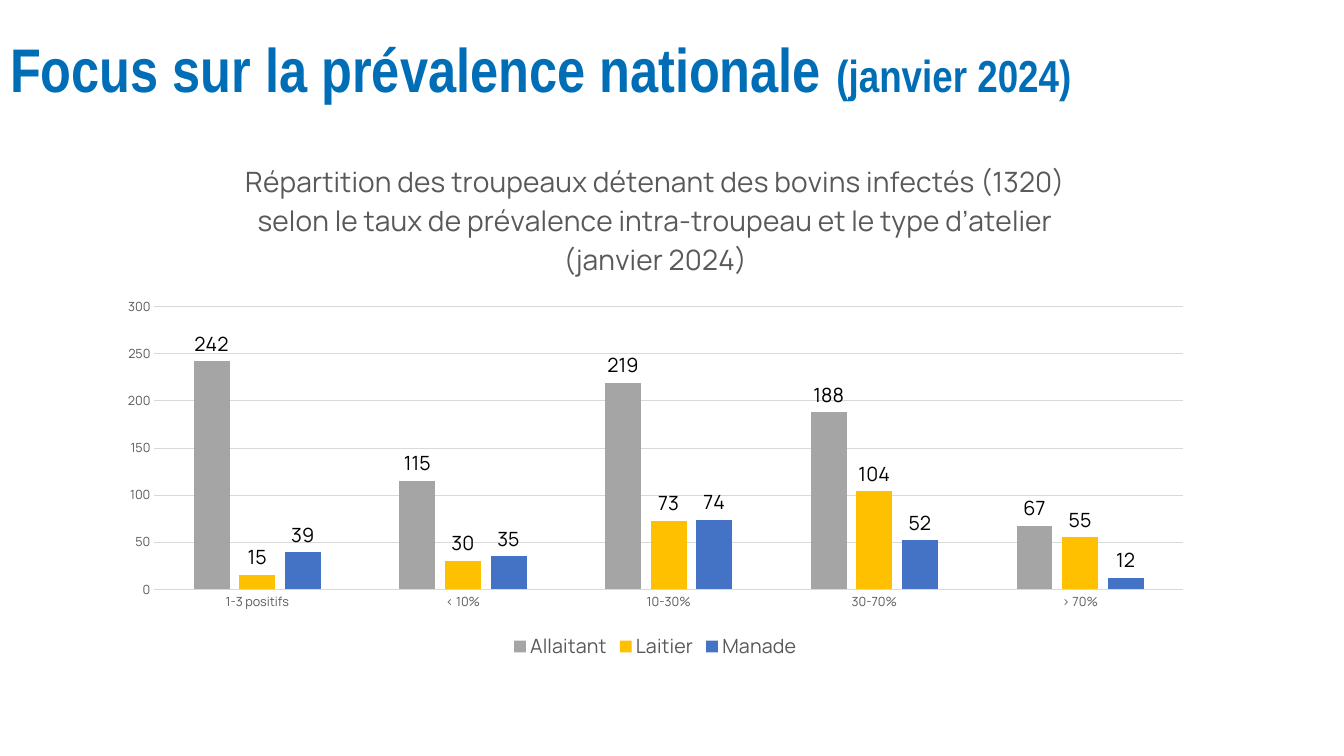
from dataclasses import dataclass

from pptx import Presentation, util as u
from pptx.chart.data import CategoryChartData
from pptx.dml.color import RGBColor
from pptx.enum import chart as ch, text as tx


@dataclass(frozen=True)
class Theme:
    head: str = "Arial Narrow"
    body: str = "Manrope"
    blue: str = "006EB6"
    gray: str = "595959"
    rule: str = "D9D9D9"
    black: str = "000000"
    bars: tuple = ("A5A5A5", "FFC000", "4472C4")
    large: int = 44
    mid: int = 32
    lead: int = 20
    label: int = 14
    tick: int = 9


def put(item, values):
    for name, value in values.items():
        setattr(item, name, value)


class Deck:
    def __init__(self, theme):
        self.theme = theme
        self.file = Presentation()
        put(self.file, dict(slide_width=u.Inches(13.33), slide_height=u.Inches(7.5)))
        self.slide = self.file.slides.add_slide(self.file.slide_layouts[5])

    def area(self, left, top, width, height):
        wide, high = self.file.slide_width, self.file.slide_height
        return [int(part * side / 100) for part, side in
                zip((left, top, width, height), (wide, high, wide, high))]

    def font(self, font, size, color, name=None, bold=False):
        put(font, dict(size=u.Pt(size), bold=bold, name=name or self.theme.body))
        font.color.rgb = RGBColor.from_string(color)

    def line(self, line, color):
        line.width = u.Pt(0.75)
        line.color.rgb = RGBColor.from_string(color)

    def title(self, area, parts):
        shape = self.slide.shapes.title
        put(shape, dict(zip(("left", "top", "width", "height"), self.area(*area))))
        put(shape.text_frame, dict(word_wrap=True, auto_size=tx.MSO_AUTO_SIZE.NONE,
                                   vertical_anchor=tx.MSO_ANCHOR.MIDDLE))
        para = shape.text_frame.paragraphs[0]
        put(para, dict(alignment=tx.PP_ALIGN.LEFT, line_spacing=0.9))
        for words, size in parts:
            run = para.add_run()
            run.text = words
            self.font(run.font, size, self.theme.blue, self.theme.head, True)

    def chart(self, area, title, groups, series):
        theme = self.theme
        data = CategoryChartData()
        data.categories = groups
        for name, values in series.items():
            data.add_series(name, values)
        chart = self.slide.shapes.add_chart(
            ch.XL_CHART_TYPE.COLUMN_CLUSTERED, *self.area(*area), data).chart
        self.font(chart.font, 10, theme.black)

        chart.has_title = True
        run = chart.chart_title.text_frame.paragraphs[0].add_run()
        run.text = title
        self.font(run.font, theme.lead, theme.gray)
        chart.chart_title.include_in_layout = False

        chart.has_legend = True
        put(chart.legend, dict(position=ch.XL_LEGEND_POSITION.BOTTOM,
                               include_in_layout=False))
        self.font(chart.legend.font, theme.label, theme.gray)

        for axis in (chart.category_axis, chart.value_axis):
            put(axis, dict(major_tick_mark=ch.XL_TICK_MARK.NONE,
                           minor_tick_mark=ch.XL_TICK_MARK.NONE))
            self.font(axis.tick_labels.font, theme.tick, theme.gray)
        self.line(chart.category_axis.format.line, theme.rule)
        put(chart.value_axis, dict(minimum_scale=0, maximum_scale=300, major_unit=50))
        chart.value_axis.format.line.fill.background()
        self.line(chart.value_axis.major_gridlines.format.line, theme.rule)

        plot = chart.plots[0]
        put(plot, dict(gap_width=219, overlap=-27, vary_by_categories=False))
        for bars, color in zip(plot.series, theme.bars):
            bars.format.fill.solid()
            bars.format.fill.fore_color.rgb = RGBColor.from_string(color)
            put(bars.data_labels, dict(show_value=True,
                                       position=ch.XL_LABEL_POSITION.OUTSIDE_END))
            self.font(bars.data_labels.font, theme.label, theme.black)


def main():
    theme = Theme()
    deck = Deck(theme)
    deck.title((0, 5.2, 100, 8.8), [
        ("Focus sur la prévalence nationale ", theme.large),
        ("(janvier 2024)", theme.mid),
    ])
    deck.chart(
        (7.88, 18.27, 81.77, 69.6),
        "Répartition des troupeaux détenant des bovins infectés (1320) selon le taux "
        "de prévalence intra-troupeau et le type d’atelier (janvier 2024)",
        ["1-3 positifs", "< 10%", "10-30%", "30-70%", "> 70%"],
        {
            "Allaitant": (242, 115, 219, 188, 67),
            "Laitier": (15, 30, 73, 104, 55),
            "Manade": (39, 35, 74, 52, 12),
        },
    )
    deck.file.save("out.pptx")


if __name__ == "__main__":
    main()
